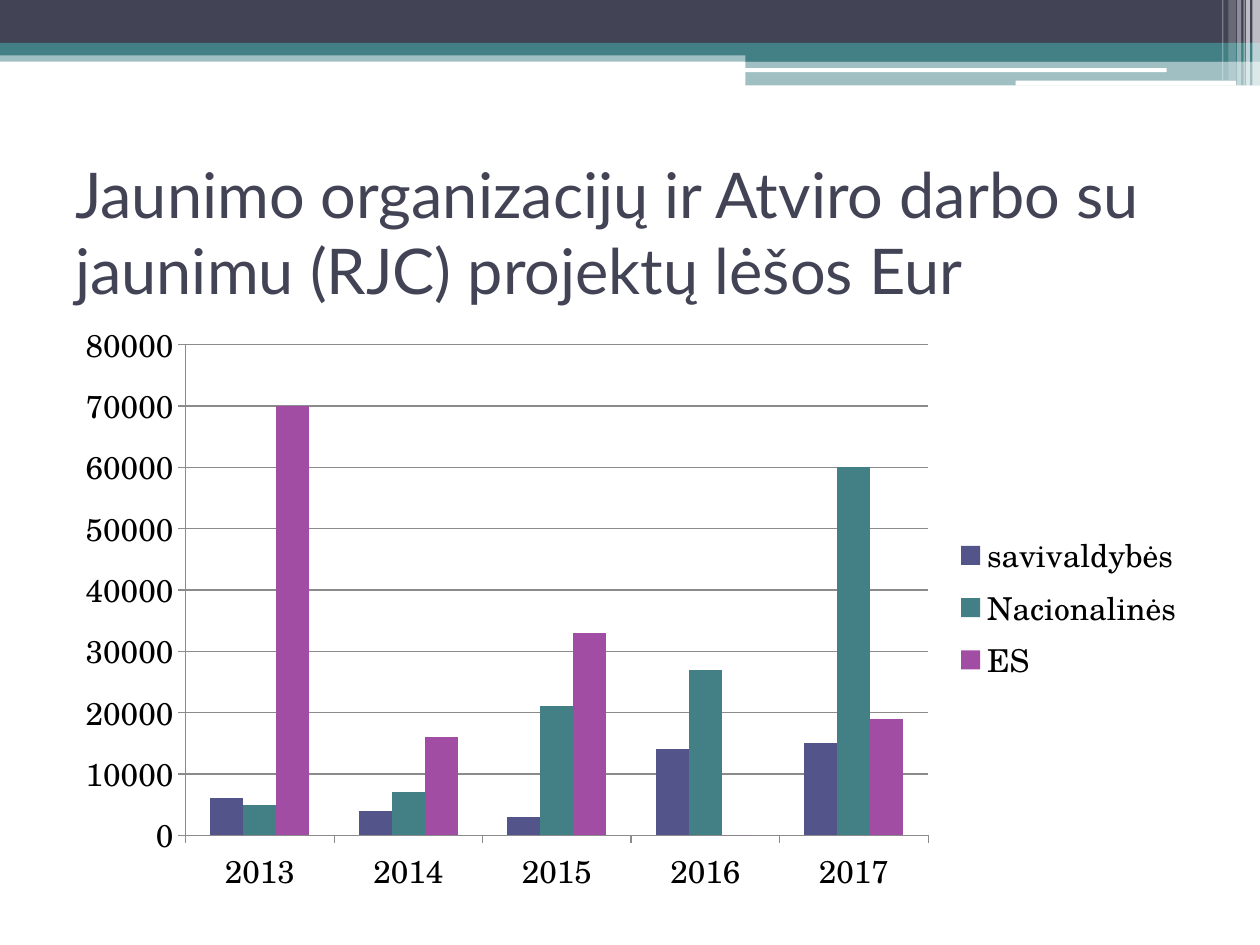
from lxml import etree
from pptx import Presentation
from pptx.chart import data as cd
from pptx.dml import color as col
from pptx.enum import chart as ec, shapes as es, text as et
from pptx.oxml import ns
from pptx.util import Pt

INK, TEAL, WHITE, GRAY = "424456", "438086", "FFFFFF", "8B8B8B"
SANS, SERIF = "Lato", "TeX Gyre Schola"
YEARS = ["2013", "2014", "2015", "2016", "2017"]
FUNDS = [
    ("savivaldybės", "53548A", [6000, 4000, 3000, 14000, 15000]),
    ("Nacionalinės", TEAL, [5000, 7000, 21000, 27000, 60000]),
    ("ES", "A04DA3", [70000, 16000, 33000, 0, 19000]),
]
BANDS = [
    (0, 28.8, 720, 6.5, TEAL, 50),
    (0, 0, 720, 24.5, INK, 100),
    (0, 24.5, 720, 7.2, TEAL, 100),
    (426, 28, 294, 7.2, TEAL, 100),
    (426, 34.8, 294, 14, TEAL, 50),
]
PILLS = [(425.5, 39, 241.2, 2.2), (580.3, 46.1, 126, 2.9)]
STRIPES = [
    (715.7, 4.3, 49, 65),
    (712, 2.2, 49, 65),
    (710.6, 0.7, 49, 60),
    (707, 2.2, 49, 40),
    (702, 4.3, 46, 20),
    (698.4, 0.7, 46, 30),
]


def rgb(code):
    return col.RGBColor.from_string(code)


def paint(fill, code, alpha=100):
    fill.solid()
    fill.fore_color.rgb = rgb(code)
    if alpha < 100:
        tint = fill._xPr.find(".//" + ns.qn("a:srgbClr"))
        etree.SubElement(tint, ns.qn("a:alpha"), val=str(alpha * 1000))


def bar(slide, box, code, alpha=100, kind=es.MSO_SHAPE.RECTANGLE):
    shape = slide.shapes.add_shape(kind, *map(Pt, box))
    shape.shadow.inherit = False
    shape.line.fill.background()
    paint(shape.fill, code, alpha)


def header(slide, left, top):
    for x, y, wide, high, code, alpha in BANDS:
        bar(slide, (left + x, top + y, wide, high), code, alpha)
    for x, y, wide, high in PILLS:
        box = (left + x, top + y, wide, high)
        bar(slide, box, WHITE, kind=es.MSO_SHAPE.ROUNDED_RECTANGLE)
    for x, wide, high, alpha in STRIPES:
        bar(slide, (left + x, top, wide, high), WHITE, alpha)


def title(slide, box, words):
    frame = slide.shapes.add_textbox(*map(Pt, box)).text_frame
    frame.word_wrap = True
    frame.vertical_anchor = et.MSO_ANCHOR.MIDDLE
    frame.text = words
    font = frame.paragraphs[0].runs[0].font
    font.name, font.size = SANS, Pt(36)
    font.color.rgb = rgb(INK)


def rule(line):
    line.width = Pt(0.75)
    line.color.rgb = rgb(GRAY)


def chart(slide, box):
    data = cd.CategoryChartData()
    data.categories = YEARS
    for name, code, vals in FUNDS:
        data.add_series(name, vals)
    kind = ec.XL_CHART_TYPE.COLUMN_CLUSTERED
    graph = slide.shapes.add_chart(kind, *map(Pt, box), data).chart
    graph.has_title = False
    graph.font.name, graph.font.size = SERIF, Pt(18)
    graph.font.color.rgb = rgb("000000")

    plot = graph.plots[0]
    plot.gap_width, plot.overlap = 150, 0
    plot.vary_by_categories = False
    for series, (name, code, vals) in zip(plot.series, FUNDS):
        paint(series.format.fill, code)

    for axis in (graph.category_axis, graph.value_axis):
        axis.major_tick_mark = ec.XL_TICK_MARK.OUTSIDE
        axis.minor_tick_mark = ec.XL_TICK_MARK.NONE
        rule(axis.format.line)
    scale = graph.value_axis
    scale.minimum_scale, scale.maximum_scale = 0, 80000
    scale.major_unit = 10000
    scale.has_major_gridlines = True
    rule(scale.major_gridlines.format.line)

    graph.has_legend = True
    graph.legend.position = ec.XL_LEGEND_POSITION.RIGHT
    graph.legend.include_in_layout = False


def main():
    deck = Presentation()
    deck.slide_width, deck.slide_height = Pt(720), Pt(540)
    slide = deck.slides.add_slide(deck.slide_layouts[6])
    header(slide, 0, 0)
    title(slide, (36, 90, 648, 84),
          "Jaunimo organizacijų ir Atviro darbo su jaunimu (RJC) projektų lėšos Eur")
    chart(slide, (36, 177, 648, 340.5))
    deck.save("out.pptx")


if __name__ == "__main__":
    main()
